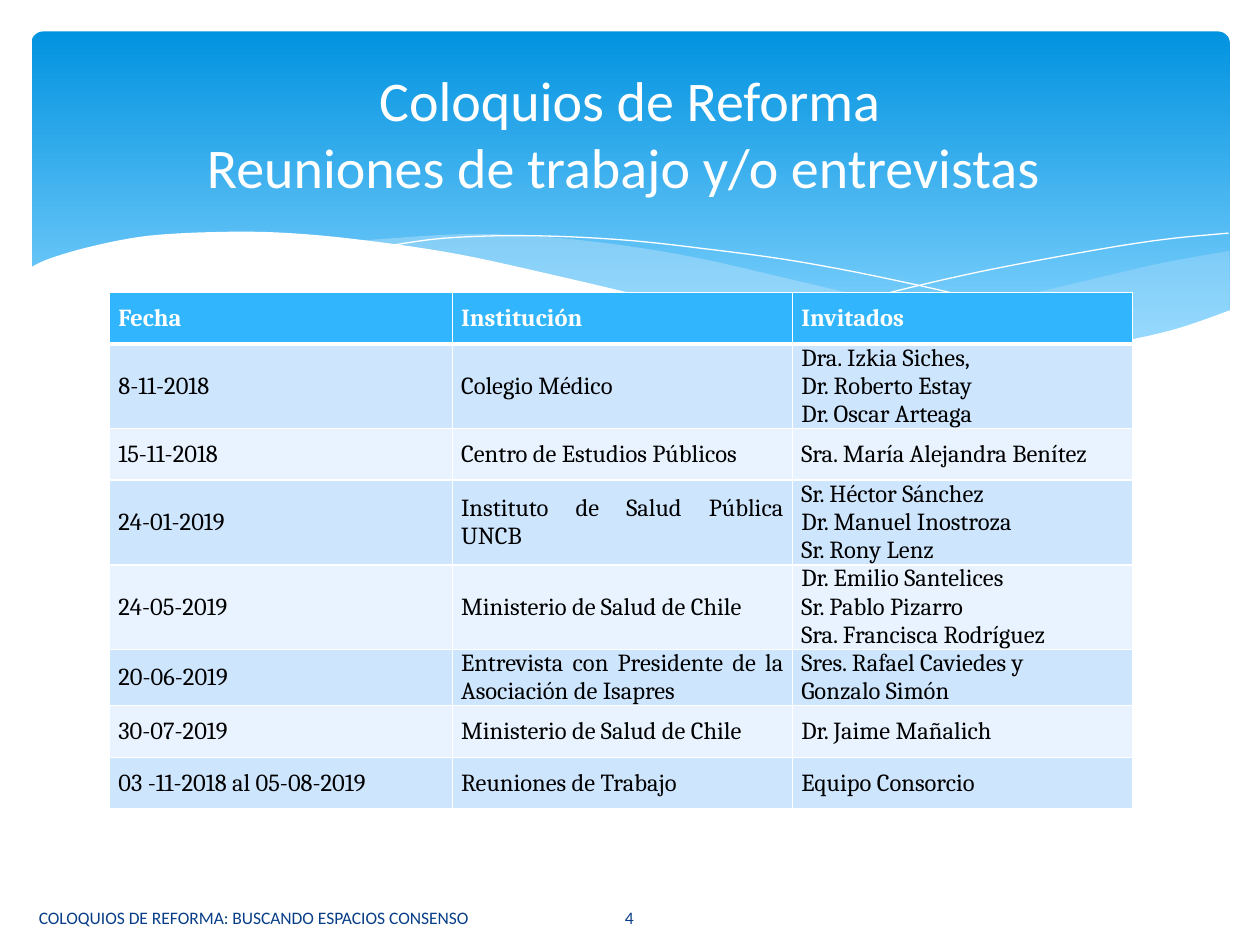
from lxml import etree
from pptx import Presentation
from pptx.dml.color import RGBColor
from pptx.enum import shapes, text
from pptx.oxml.ns import qn
from pptx.util import Inches, Pt

COLORS = {"white": "FFFFFF", "black": "000000", "top": "0293E0", "bottom": "83D3FE",
          "wave": "C6E7FC", "header": "31B6FD", "odd": "CEE5FE", "even": "E8F3FF",
          "footer": "073E87"}

TITLE = "Coloquios de Reforma\nReuniones de trabajo y/o entrevistas "
FOOTERS = [("COLOQUIOS DE REFORMA: BUSCANDO ESPACIOS CONSENSO", 0.21, 4.14, "LEFT"),
           ("4", 4.36, 1.27, "CENTER")]
ROWS = [
    ("Fecha", "Institución", ["Invitados"]),
    ("8-11-2018", "Colegio Médico",
     ["Dra. Izkia Siches, ", "Dr. Roberto Estay", "Dr. Oscar Arteaga"]),
    ("15-11-2018", "Centro de Estudios Públicos", ["Sra. María Alejandra Benítez"]),
    ("24-01-2019", "Instituto de Salud Pública UNCB",
     ["Sr. Héctor Sánchez", "Dr. Manuel Inostroza", "Sr. Rony Lenz"]),
    ("24-05-2019", "Ministerio de Salud de Chile",
     ["Dr. Emilio Santelices", "Sr. Pablo Pizarro", "Sra. Francisca Rodríguez"]),
    ("20-06-2019", "Entrevista con Presidente de la Asociación de Isapres",
     ["Sres. Rafael Caviedes y", "Gonzalo Simón"]),
    ("30-07-2019", "Ministerio de Salud de Chile", ["Dr. Jaime Mañalich"]),
    ("03 -11-2018 al 05-08-2019", "Reuniones de Trabajo ", ["Equipo Consorcio "]),
]
COL_WIDTHS = [2.72, 2.7, 2.7]
ROW_HEIGHT = 0.41

# Each wave: smooth edges given by a few points, fill opacity (None = outline only)
WAVES = [
    ([[(9.76, 1.99), (9.21, 2.09), (8.61, 2.23), (7.79, 2.42), (7.06, 2.57), (6.61, 2.65)],
      [(6.61, 2.65), (7.05, 2.71), (7.57, 2.76), (8.03, 2.78), (8.54, 2.76), (8.97, 2.7),
       (9.35, 2.61), (9.76, 2.47)]], 29),
    ([[(8.93, 2.73), (8.37, 2.65), (7.75, 2.54), (7.06, 2.4), (6.29, 2.22), (5.55, 2.05),
       (4.89, 1.94), (4.2, 1.87), (3.61, 1.86), (2.86, 1.91)],
      [(2.86, 1.91), (3.62, 2.03), (4.49, 2.22), (5.3, 2.4), (6.01, 2.55), (6.65, 2.66),
       (7.22, 2.74), (7.73, 2.77), (8.18, 2.78), (8.57, 2.77), (8.93, 2.73)]], 40),
    ([[(3.09, 1.95), (3.53, 1.89), (4.16, 1.87), (4.89, 1.9), (5.56, 1.97), (6.36, 2.08),
       (7.27, 2.26), (8.31, 2.51), (9.07, 2.72)]], None),
    ([[(6.13, 2.57), (6.95, 2.35), (7.76, 2.16), (8.66, 1.99), (9.24, 1.9), (9.75, 1.85)]],
     None),
    ([[(9.77, 2.46), (9.3, 2.62), (8.75, 2.73), (8.09, 2.77), (7.26, 2.72), (6.47, 2.62),
       (5.55, 2.45), (4.47, 2.2), (3.65, 2.02), (2.92, 1.91), (2.3, 1.85), (1.77, 1.84),
       (1.19, 1.87), (0.75, 1.95), (0.4, 2.05), (0.23, 2.13)],
      [(0.23, 3.29), (9.77, 3.29)]], 100),
]


def rgb(name):
    return RGBColor.from_string(COLORS[name])


def write(tf, paragraphs, size=14, font="Cambria", color="black", bold=False, align="JUSTIFY"):
    tf.word_wrap = True
    for i, line in enumerate(paragraphs):
        p = tf.add_paragraph() if i else tf.paragraphs[0]
        p.text = line
        p.alignment = getattr(text.PP_ALIGN, align)
        for r in p.runs:
            r.font.size, r.font.name, r.font.bold = Pt(size), font, bold
            r.font.color.rgb = rgb(color)


def smooth(points, steps=6):
    """Catmull-Rom curve through the points."""
    if len(points) < 3:
        return points
    padded = [points[0], *points, points[-1]]
    curve = [points[0]]
    for a, b, c, d in zip(padded, padded[1:], padded[2:], padded[3:]):
        for t in (k / steps for k in range(1, steps + 1)):
            curve.append(tuple(
                (2 * q + (r - p) * t + (2 * p - 5 * q + 4 * r - v) * t ** 2
                 + (3 * q - p - 3 * r + v) * t ** 3) / 2
                for p, q, r, v in zip(a, b, c, d)))
    return curve


def add_wave(s, edges, opacity):
    first, *rest = [(Inches(x), Inches(y)) for edge in edges for x, y in smooth(edge)]
    builder = s.shapes.build_freeform(*first)
    builder.add_line_segments(rest, close=opacity is not None)
    sp = builder.convert_to_shape()
    sp.shadow.inherit = False
    if opacity is None:
        sp.fill.background()
        sp.line.color.rgb = rgb("white")
        sp.line.width = 0
        return
    sp.line.fill.background()
    sp.fill.solid()
    sp.fill.fore_color.rgb = rgb("white" if opacity == 100 else "wave")
    if opacity < 100:
        clr = next(sp.element.spPr.iter(qn("a:srgbClr")))
        etree.SubElement(clr, qn("a:alpha"), val=str(opacity * 1000))


def set_borders(cell, bottom):
    tc_pr = cell._tc.get_or_add_tcPr()
    for side, width in (("L", 1), ("R", 1), ("T", 1), ("B", bottom)):
        ln = etree.SubElement(tc_pr, qn(f"a:ln{side}"), w=str(Pt(width)))
        fill = etree.SubElement(ln, qn("a:solidFill"))
        etree.SubElement(fill, qn("a:srgbClr"), val=COLORS["white"])


def add_meetings(s):
    frame = s.shapes.add_table(len(ROWS), len(COL_WIDTHS), Inches(0.87), Inches(2.32),
                               Inches(sum(COL_WIDTHS)), Inches(4.19))
    table = frame.table
    for col, width in zip(table.columns, COL_WIDTHS):
        col.width = Inches(width)
    for i, (row, (date, institution, guests)) in enumerate(zip(table.rows, ROWS)):
        row.height = Inches(ROW_HEIGHT)
        head = i == 0
        for cell, lines in zip(row.cells, ([date], [institution], guests)):
            # The border above must match the thick line under the header
            set_borders(cell, bottom=3 if head else 1)
            if i == 1:
                cell._tc.tcPr.find(qn("a:lnT")).set("w", str(Pt(3)))
            cell.fill.solid()
            cell.fill.fore_color.rgb = rgb("header" if head else "odd" if i % 2 else "even")
            cell.vertical_anchor = text.MSO_ANCHOR.MIDDLE
            cell.margin_left = cell.margin_right = Inches(0.07)
            cell.margin_top = cell.margin_bottom = 0
            write(cell.text_frame, lines, color="white" if head else "black", bold=head)


def main():
    prs = Presentation()
    prs.slide_width, prs.slide_height = Inches(10), Inches(7.5)
    s = prs.slides.add_slide(prs.slide_layouts[5])

    # Gradient banner
    banner = s.shapes.add_shape(shapes.MSO_SHAPE.ROUNDED_RECTANGLE, Inches(0.25), Inches(0.25),
                                Inches(9.51), Inches(2.7))
    banner.adjustments[0] = 0.034
    banner.shadow.inherit = False
    banner.line.fill.background()
    banner.fill.gradient()
    banner.fill.gradient_angle = 270
    for stop, color, position in zip(banner.fill.gradient_stops, ("top", "bottom"), (0, 0.9)):
        stop.color.rgb = rgb(color)
        stop.position = position

    for edges, opacity in WAVES:
        add_wave(s, edges, opacity)

    add_meetings(s)

    # Title, brought in front of the banner
    title = s.shapes.title
    title.left, title.top, title.width, title.height = map(Inches, (0.5, 0.37, 9, 1.37))
    title.element.getparent().append(title.element)
    tf = title.text_frame
    write(tf, [TITLE], size=32, font="Calibri", color="white", align="CENTER")
    tf.auto_size = text.MSO_AUTO_SIZE.NONE
    tf.vertical_anchor = text.MSO_ANCHOR.MIDDLE

    # Footer and slide number
    for label, left, width, align in FOOTERS:
        tf = s.shapes.add_textbox(Inches(left), Inches(7.08), Inches(width),
                                  Inches(0.4)).text_frame
        tf.vertical_anchor = text.MSO_ANCHOR.MIDDLE
        write(tf, [label], size=10, font="Calibri", color="footer", align=align)

    prs.save("out.pptx")


if __name__ == "__main__":
    main()
